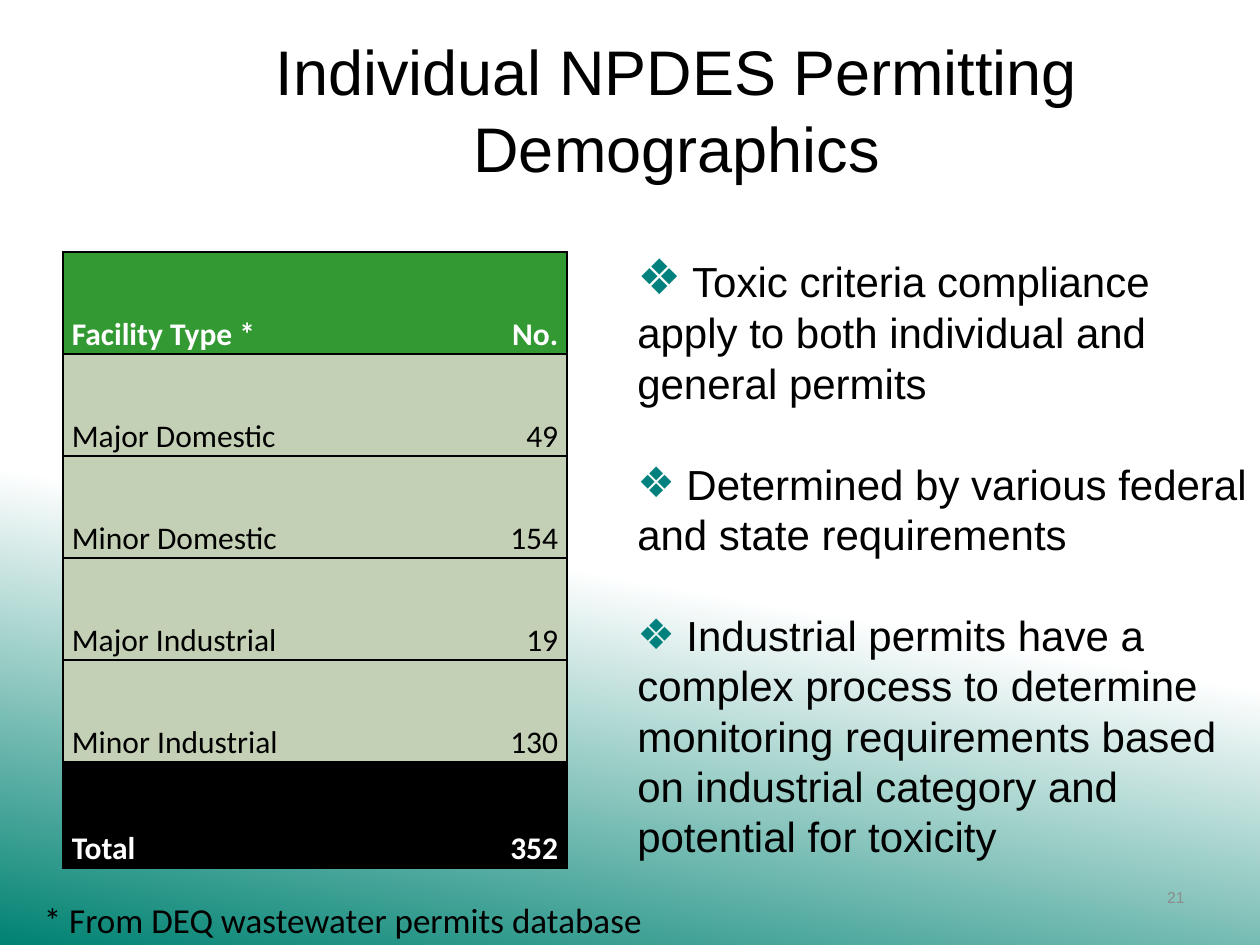
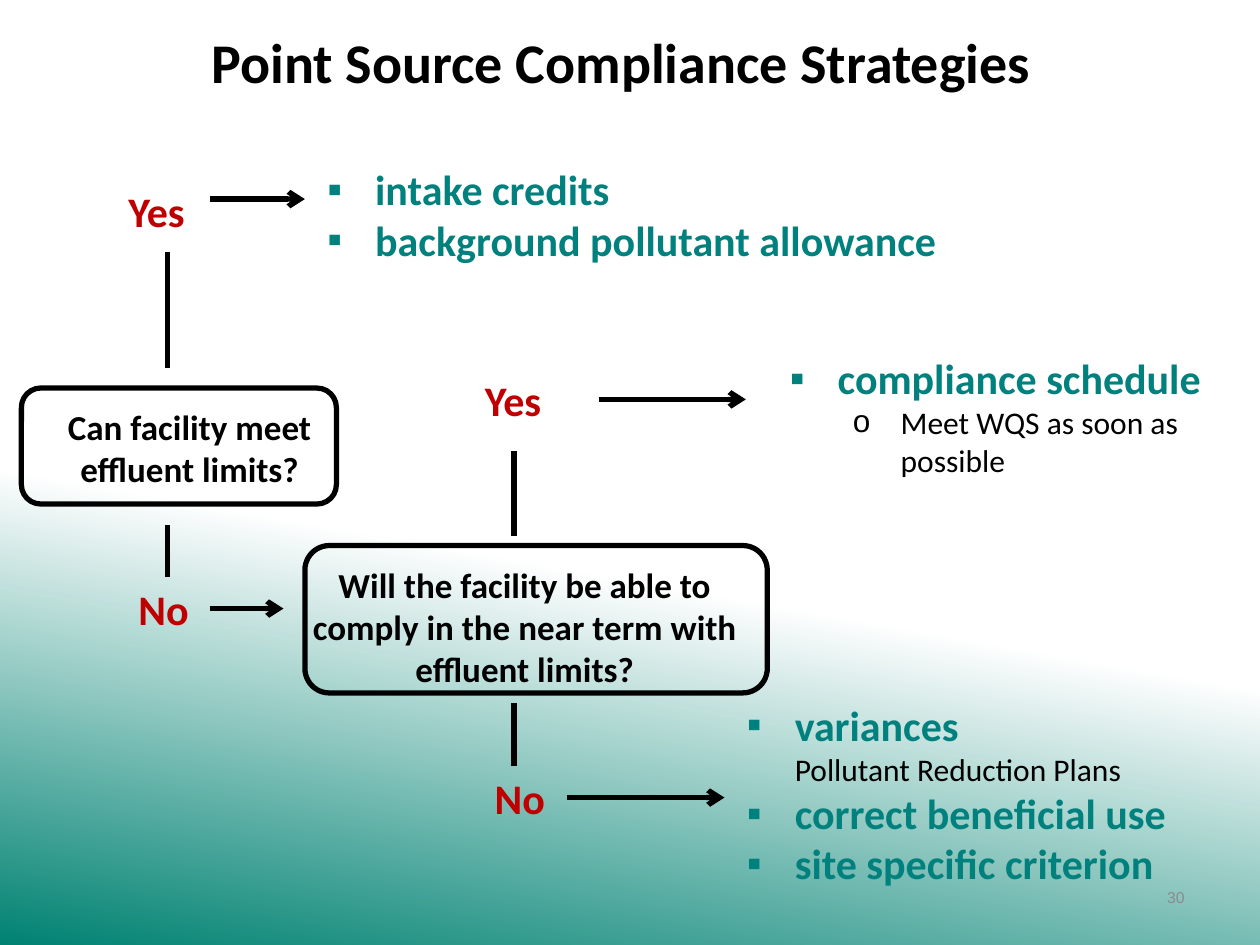
from lxml import etree
from pptx import Presentation
from pptx.dml.color import RGBColor
from pptx.enum.shapes import MSO_CONNECTOR as Connector, MSO_SHAPE as Shape
from pptx.enum.text import MSO_ANCHOR as Anchor, PP_ALIGN as Align
from pptx.oxml.ns import qn
from pptx.util import Inches, Pt

BLACK, WHITE, GRAY = "000000", "FFFFFF", "8C8C8C"
TEAL, DEEP_TEAL, RED = "00817E", "008272", "C00000"
GREEN, SAGE = "339933", "C4D0B5"
HANGING = 0.38

FACILITIES = [
    ("Facility Type *", "No."),
    ("Major Domestic", "49"),
    ("Minor Domestic", "154"),
    ("Major Industrial", "19"),
    ("Minor Industrial", "130"),
    ("Total", "352"),
]


def rgb(value):
    return RGBColor.from_string(value)


def add_child(parent, tag, **attributes):
    return etree.SubElement(parent, qn(tag), attributes)


def add_span(para, text, size, font="Calibri", color=BLACK, bold=False):
    span = para.add_run()
    span.text = text
    span.font.size = Pt(size)
    span.font.name = font
    span.font.bold = bold
    span.font.color.rgb = rgb(color)


def write(frame, text, size, align=Align.LEFT, bullet=None, bullet_color=TEAL,
          indent=0, hanging=0, before=0, spacing=None, **span_format):
    """Add a formatted paragraph, using the first one while it is empty."""
    para = frame.paragraphs[0]
    if para.runs:
        para = frame.add_paragraph()
    properties = para._p.get_or_add_pPr()
    properties.set("marL", str(Inches(indent)))
    properties.set("indent", str(-Inches(hanging)))
    if bullet:
        color = add_child(properties, "a:buClr")
        add_child(color, "a:srgbClr", val=bullet_color)
        add_child(properties, "a:buFont", typeface="Arial")
        add_child(properties, "a:buChar", char=bullet)
    para.alignment = align
    para.space_before = Pt(before)
    if spacing:
        para.line_spacing = spacing
    add_span(para, text, size, **span_format)
    return para


def add_frame(slide, left, top, width, height, anchor=Anchor.TOP):
    box = slide.shapes.add_textbox(
        Inches(left), Inches(top), Inches(width), Inches(height))
    frame = box.text_frame
    frame.word_wrap = True
    frame.vertical_anchor = anchor
    return frame


def add_page(deck, number):
    """Add a blank page with the shared gradient and page number."""
    page = deck.slides.add_slide(deck.slide_layouts[6])
    fill = page.background.fill
    fill.gradient()
    fill.gradient_angle = 260
    for stop, (position, color) in zip(
            fill.gradient_stops, [(0.59, WHITE), (1, DEEP_TEAL)]):
        stop.position = position
        stop.color.rgb = rgb(color)
    frame = add_frame(page, 7.17, 6.92, 2.33, 0.4, Anchor.MIDDLE)
    write(frame, str(number), 9, font="Arial", color=GRAY, align=Align.RIGHT)
    return page


def set_borders(cell, visible):
    """Draw the sides named in visible and clear the others."""
    properties = cell._tc.get_or_add_tcPr()
    for side in "LRTB":
        line = add_child(properties, f"a:ln{side}", w=str(Pt(1)))
        if side in visible:
            fill = add_child(line, "a:solidFill")
            add_child(fill, "a:srgbClr", val=BLACK)
        else:
            add_child(line, "a:noFill")


def add_facility_table(page):
    table = page.shapes.add_table(
        len(FACILITIES), 2, Inches(0.5), Inches(2), Inches(4), Inches(4.89)).table
    table.first_row = table.horz_banding = False
    table.columns[0].width, table.columns[1].width = Inches(2.58), Inches(1.42)
    last = len(FACILITIES) - 1
    for row, values in enumerate(FACILITIES):
        table.rows[row].height = Inches(0.84 if row == last else 0.81)
        fill = {0: GREEN, last: BLACK}.get(row, SAGE)
        strong = row in (0, last)
        for column, value in enumerate(values):
            cell = table.cell(row, column)
            set_borders(cell, "RTB" if column else "LTB")
            cell.fill.solid()
            cell.fill.fore_color.rgb = rgb(fill)
            cell.vertical_anchor = Anchor.BOTTOM
            cell.margin_left = cell.margin_right = Inches(0.07)
            cell.margin_top = cell.margin_bottom = 0
            write(cell.text_frame, value, 18, bold=strong, spacing=1.15,
                  color=WHITE if strong else BLACK,
                  align=Align.RIGHT if column else Align.LEFT)


def add_question(page, outline, text_area, text):
    left, top, width, height = map(Inches, outline)
    shape = page.shapes.add_shape(
        Shape.ROUNDED_RECTANGLE, left, top, width, height)
    shape.shadow.inherit = False
    shape.fill.background()
    shape.line.color.rgb = rgb(BLACK)
    shape.line.width = Pt(3)
    write(add_frame(page, *text_area), text, 20, bold=True, align=Align.CENTER)


def add_answer(page, left, top, text, align=Align.LEFT):
    frame = add_frame(page, left, top, 0.75, 0.5)
    write(frame, text, 24, color=RED, bold=True, align=align)


def add_strategy(frame, text):
    write(frame, text, 24, color=TEAL, bold=True, bullet="▪",
          indent=HANGING, hanging=HANGING)


def add_line(page, start, end, arrow=False):
    line = page.shapes.add_connector(
        Connector.STRAIGHT, *map(Inches, start + end))
    line.line.color.rgb = rgb(BLACK)
    line.line.width = Pt(3)
    if arrow:
        add_child(line.line._get_or_add_ln(), "a:tailEnd", type="arrow")
    add_child(line._element.spPr, "a:effectLst")


def build_demographics(deck):
    page = add_page(deck, 21)
    title = add_frame(page, 1.12, 0.21, 8.5, 1.29, Anchor.MIDDLE)
    write(title, "Individual NPDES Permitting Demographics", 36, font="Arial",
          align=Align.CENTER, spacing=Pt(44))
    add_facility_table(page)

    notes = add_frame(page, 4.96, 1.92, 5.04, 5.02)
    first = write(notes, " ", 28, bullet="❖")
    add_span(first, "Toxic criteria compliance apply to both individual and "
             "general permits", 24, font="Arial")
    for text in (
            " Determined by various federal and state requirements",
            " Industrial permits have a complex process to determine monitoring "
            "requirements based on industrial category and potential for toxicity"):
        write(notes, text, 24, font="Arial", bullet="❖", before=28.8,
              spacing=Pt(28.8))

    footnote = add_frame(page, 0.25, 7.08, 5.33, 0.44)
    write(footnote, "* From DEQ wastewater permits database", 20)


def build_strategies(deck):
    page = add_page(deck, 30)
    title = add_frame(page, 1.58, 0.17, 6.83, 0.64)
    write(title, "Point Source Compliance Strategies", 32, bold=True)

    add_question(page, (0.17, 3.08, 2.5, 0.92), (0.17, 3.17, 2.67, 0.77),
                 "Can facility meet effluent limits?")
    add_question(page, (2.42, 4.33, 3.67, 1.17), (2.33, 4.42, 3.67, 1.11),
                 "Will the facility be able to comply in the near term with "
                 "effluent limits?")

    add_answer(page, 0.92, 1.42, "Yes")
    add_answer(page, 1, 4.58, "No")
    add_answer(page, 3.75, 2.92, "Yes")
    add_answer(page, 3.75, 6.08, "No", Align.CENTER)

    credits = add_frame(page, 2.5, 1.25, 5.33, 0.91)
    add_strategy(credits, "intake credits")
    add_strategy(credits, "background pollutant allowance")

    schedule = add_frame(page, 6.17, 2.75, 3.67, 1.11)
    add_strategy(schedule, "compliance schedule")
    write(schedule, "Meet WQS as soon as possible", 18, bullet="o",
          bullet_color=BLACK, indent=0.88, hanging=HANGING)

    variances = add_frame(page, 5.83, 5.5, 4.17, 1.62)
    add_strategy(variances, "variances")
    write(variances, "Pollutant Reduction Plans", 18, indent=HANGING)
    add_strategy(variances, "correct beneficial use")
    add_strategy(variances, "site specific criterion")

    for x, bottom, top in [(1.33, 2.92, 2), (1.33, 4.58, 4.17),
                           (4.08, 4.25, 3.58), (4.08, 6.08, 5.58)]:
        add_line(page, (x, bottom), (x, top))
    for y, left, right in [(1.58, 1.67, 2.42), (4.83, 1.67, 2.25),
                           (3.17, 4.75, 5.92), (6.33, 4.5, 5.75)]:
        add_line(page, (left, y), (right, y), arrow=True)


def main():
    deck = Presentation()
    deck.slide_width, deck.slide_height = Inches(10), Inches(7.5)
    build_demographics(deck)
    build_strategies(deck)
    deck.save("out.pptx")


if __name__ == "__main__":
    main()
